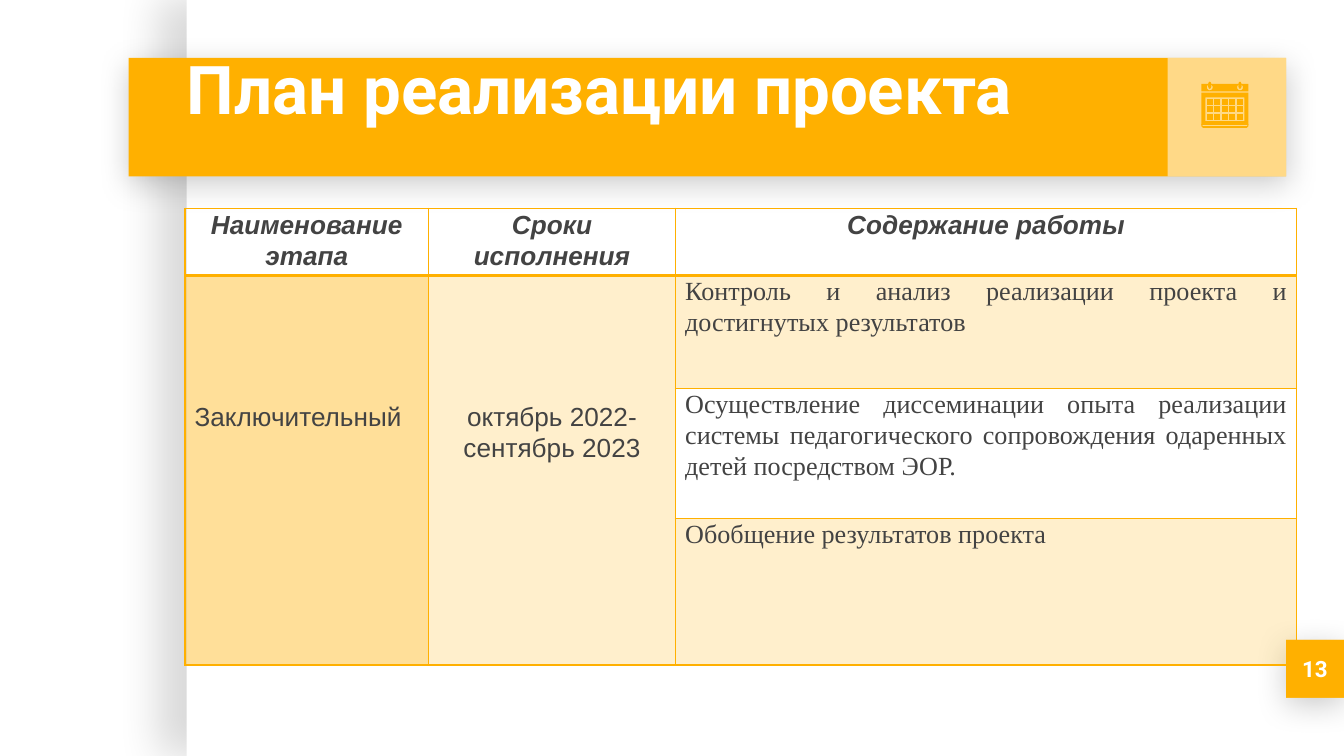
from math import cos, pi, sin

from pptx import Presentation
from pptx.dml.color import RGBColor
from pptx.enum.shapes import MSO_SHAPE
from pptx.enum.text import MSO_ANCHOR, MSO_AUTO_SIZE, PP_ALIGN
from pptx.oxml import parse_xml
from pptx.oxml.ns import nsdecls, qn
from pptx.util import Pt

COLORS = {"accent": "FFB000", "white": "FFFFFF", "text": "434343", "shadow": "000000"}
ACCENT_SHADOW = {"opacity": 20, "blur": 16.9, "distance": 3.8, "angle": 90}
CARD_SHADOW = {"opacity": 15, "blur": 22.5, "distance": 15, "angle": 180}

COLUMN_WIDTHS = (130.3, 132.5, 332.6)
ROW_HEIGHTS = (36, 60.5, 69.8, 78.5)
HEADERS = ("Наименование этапа", "Сроки исполнения", "Содержание работы")
TASKS = (
    ("Контроль и анализ реализации проекта и достигнутых результатов", 20),
    ("Осуществление диссеминации опыта реализации системы педагогического "
     "сопровождения одаренных детей посредством ЭОР.", None),
    ("Обобщение результатов проекта", 20),
)


def set_opacity(properties, percent):
    """Make the solid fill of a shape or cell partly transparent."""
    color = properties.find(qn("a:solidFill"))[0]
    color.append(parse_xml(f'<a:alpha {nsdecls("a")} val="{percent * 1000}"/>'))


def add_shadow(shape, opacity, blur, distance, angle):
    properties = shape._element.spPr
    for effects in properties.findall(qn("a:effectLst")):
        properties.remove(effects)
    properties.append(parse_xml(
        f'<a:effectLst {nsdecls("a")}><a:outerShdw blurRad="{Pt(blur)}" '
        f'dist="{Pt(distance)}" dir="{angle * 60000}" algn="bl" rotWithShape="0">'
        f'<a:srgbClr val="{COLORS["shadow"]}"><a:alpha val="{opacity * 1000}"/>'
        f'</a:srgbClr></a:outerShdw></a:effectLst>'))


def paint(shape, color):
    shape.shadow.inherit = False
    shape.fill.solid()
    shape.fill.fore_color.rgb = RGBColor.from_string(COLORS[color])
    shape.line.fill.background()


def add_block(page, left, top, width, height, color, shadow=None):
    block = page.shapes.add_shape(
        MSO_SHAPE.RECTANGLE, Pt(left), Pt(top), Pt(width), Pt(height))
    paint(block, color)
    if shadow:
        add_shadow(block, **shadow)
    return block


def write(frame, text, size, font, color, align, bold=False, italic=False):
    para = frame.paragraphs[0]
    para.alignment = align
    span = para.add_run()
    span.text = text
    span.font.size = Pt(size)
    span.font.name = font
    span.font.bold = bold
    span.font.italic = italic
    span.font.color.rgb = RGBColor.from_string(COLORS[color])
    return para


def place_title(page, text):
    title = page.shapes.title
    title.left, title.top, title.width, title.height = Pt(92.9), Pt(31), Pt(530.6), Pt(74.9)
    frame = title.text_frame
    frame.word_wrap = True
    frame.auto_size = MSO_AUTO_SIZE.NONE
    frame.vertical_anchor = MSO_ANCHOR.BOTTOM
    frame.margin_left = frame.margin_right = Pt(7.2)
    frame.margin_top, frame.margin_bottom = 0, Pt(37.5)
    write(frame, text, 36, "Roboto", "white", PP_ALIGN.LEFT, bold=True)
    tree = title.element.getparent()
    tree.append(title.element)  # bring in front of the banner


def add_page_number(page, number):
    place = (689, 342.8, 31, 31)
    add_block(page, *place, "accent", ACCENT_SHADOW)
    badge = add_block(page, *place, "accent")
    frame = badge.text_frame
    frame.margin_left = frame.margin_right = frame.margin_top = frame.margin_bottom = Pt(7.2)
    frame.word_wrap = False
    frame.vertical_anchor = MSO_ANCHOR.MIDDLE
    write(frame, number, 12, "Roboto", "white", PP_ALIGN.CENTER, bold=True)


def set_borders(cell, bottom=1):
    properties = cell._tc.get_or_add_tcPr()
    for side, width in (("L", 1), ("R", 1), ("T", 1), ("B", bottom)):
        properties.append(parse_xml(
            f'<a:ln{side} {nsdecls("a")} w="{Pt(width)}"><a:solidFill>'
            f'<a:srgbClr val="{COLORS["accent"]}"/></a:solidFill></a:ln{side}>'))


def fill_cell(cell, text, align, font="Arial", opacity=None, top=0, **style):
    cell.margin_left = cell.margin_right = Pt(5.1)
    cell.margin_top, cell.margin_bottom = Pt(top), 0
    if opacity:
        cell.fill.solid()
        cell.fill.fore_color.rgb = RGBColor.from_string(COLORS["accent"])
        set_opacity(cell._tc.tcPr, opacity)
    para = write(cell.text_frame, text, 14, font, "text", align, **style)
    para.line_spacing = 1.07


def add_plan(page):
    table = page.shapes.add_table(
        len(ROW_HEIGHTS), len(COLUMN_WIDTHS), Pt(99.2), Pt(111.6),
        Pt(sum(COLUMN_WIDTHS)), Pt(sum(ROW_HEIGHTS))).table
    table.first_row = table.horz_banding = False
    for column, width in zip(table.columns, COLUMN_WIDTHS):
        column.width = Pt(width)
    for index, (row, height) in enumerate(zip(table.rows, ROW_HEIGHTS)):
        row.height = Pt(height)
        for cell in row.cells:
            set_borders(cell, bottom=2 if index == 0 else 1)
            cell.fill.background()
    for column in (0, 1):
        table.cell(1, column).merge(table.cell(3, column))

    for column, header in enumerate(HEADERS):
        fill_cell(table.cell(0, column), header, PP_ALIGN.CENTER, bold=True, italic=True)
    fill_cell(table.cell(1, 0), "Заключительный", PP_ALIGN.JUSTIFY, opacity=40, top=67)
    fill_cell(table.cell(1, 1), "октябрь 2022-сентябрь 2023", PP_ALIGN.CENTER,
              opacity=20, top=67)
    for row, (task, opacity) in enumerate(TASKS, start=1):
        fill_cell(table.cell(row, 2), task, PP_ALIGN.JUSTIFY, "Times New Roman", opacity)


def rectangle(left, top, right, bottom):
    return [(left, top), (left, bottom), (right, bottom), (right, top)]


def ellipse(x, y, radius_x, radius_y):
    steps = [2 * pi * step / 16 for step in range(16)]
    return [(x + radius_x * cos(angle), y + radius_y * sin(angle)) for angle in steps]


def add_outline(group, *contours):
    """Draw one filled outline; contours inside another one become holes."""
    points = [[(Pt(x), Pt(y)) for x, y in contour] for contour in contours]
    builder = group.shapes.build_freeform(*points[0][0], scale=1.0)
    for index, contour in enumerate(points):
        if index:
            builder.move_to(*contour[0])
        builder.add_line_segments(contour[1:], close=True)
    paint(builder.convert_to_shape(), "accent")


def add_calendar(page):
    group = page.shapes.add_group_shape()
    left, right = 643.6, 668.8
    ring_centers = (648.1, 664.3)
    add_outline(group, rectangle(left, 44.9, right, 48.9),
                *[ellipse(x, 46.8, 1.6, 1.6) for x in ring_centers])
    add_outline(group, [(left, 66.4), (left + 0.8, 67.6), (right - 0.8, 67.6), (right, 66.4),
                        (right, 67.7), (right - 0.8, 68.5), (left + 0.8, 68.5), (left, 67.7)])
    for x in ring_centers:
        add_outline(group, ellipse(x, 45.7, 0.9, 1.9))
    add_outline(group, rectangle(left, 49.7, right, 67),
                rectangle(left + 2.1, 52.2, right - 2.1, 65))
    for row in range(3):
        for column in range(5):
            x, y = 646.6 + 4 * column, 53 + 4 * row
            add_outline(group, rectangle(x, y, x + 3.2, y + 3.2))


def main():
    deck = Presentation()
    deck.slide_width, deck.slide_height = Pt(720), Pt(405)
    page = deck.slides.add_slide(deck.slide_layouts[5])
    add_block(page, 100, 0, 620, 405, "white", CARD_SHADOW)
    add_block(page, 69, 31, 620, 63.5, "accent", ACCENT_SHADOW)
    icon_panel = add_block(page, 625.5, 31, 63.5, 63.5, "white")
    set_opacity(icon_panel._element.spPr, 53)
    place_title(page, "План реализации проекта")
    add_page_number(page, "13")
    add_plan(page)
    add_calendar(page)
    deck.save("out.pptx")


if __name__ == "__main__":
    main()
